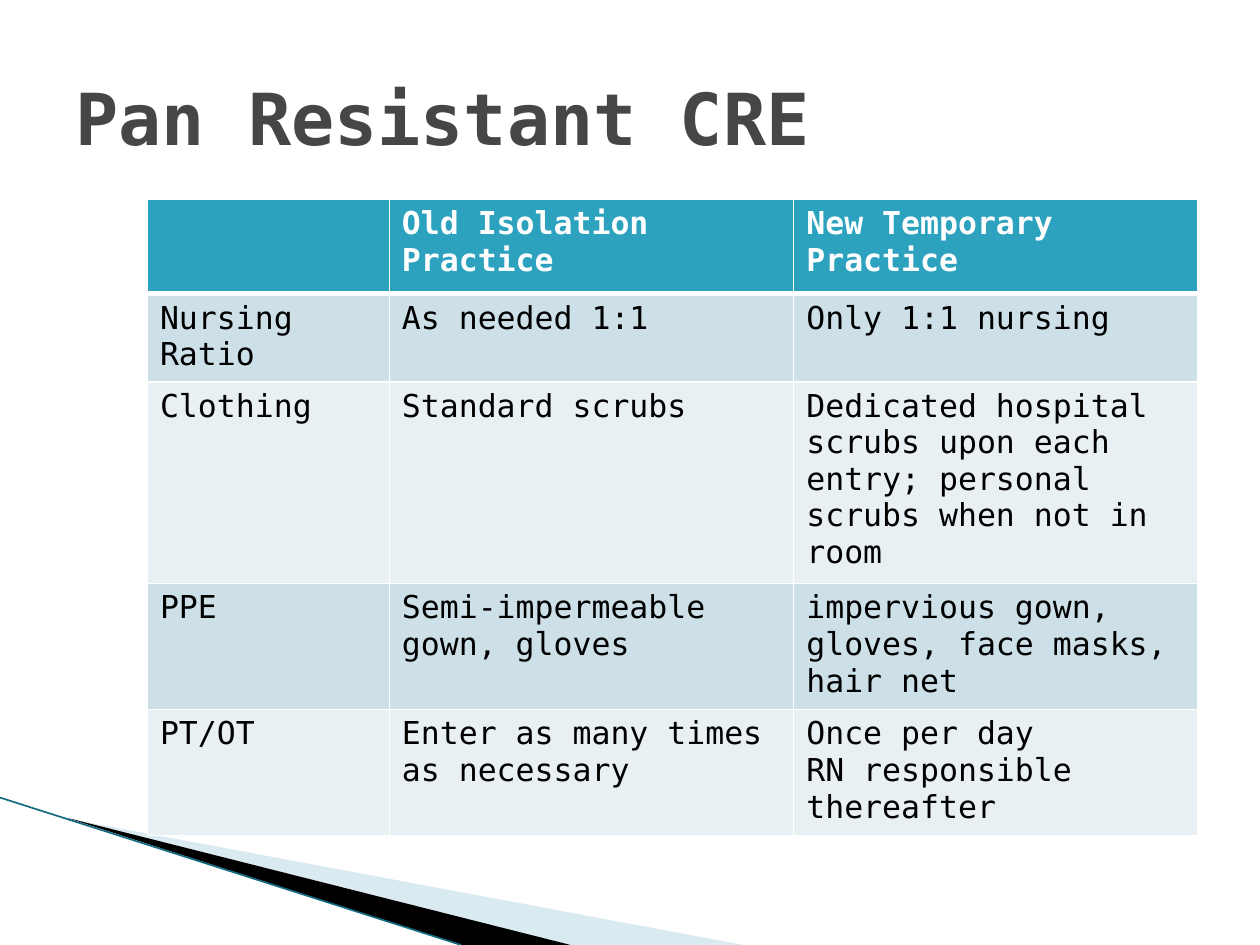
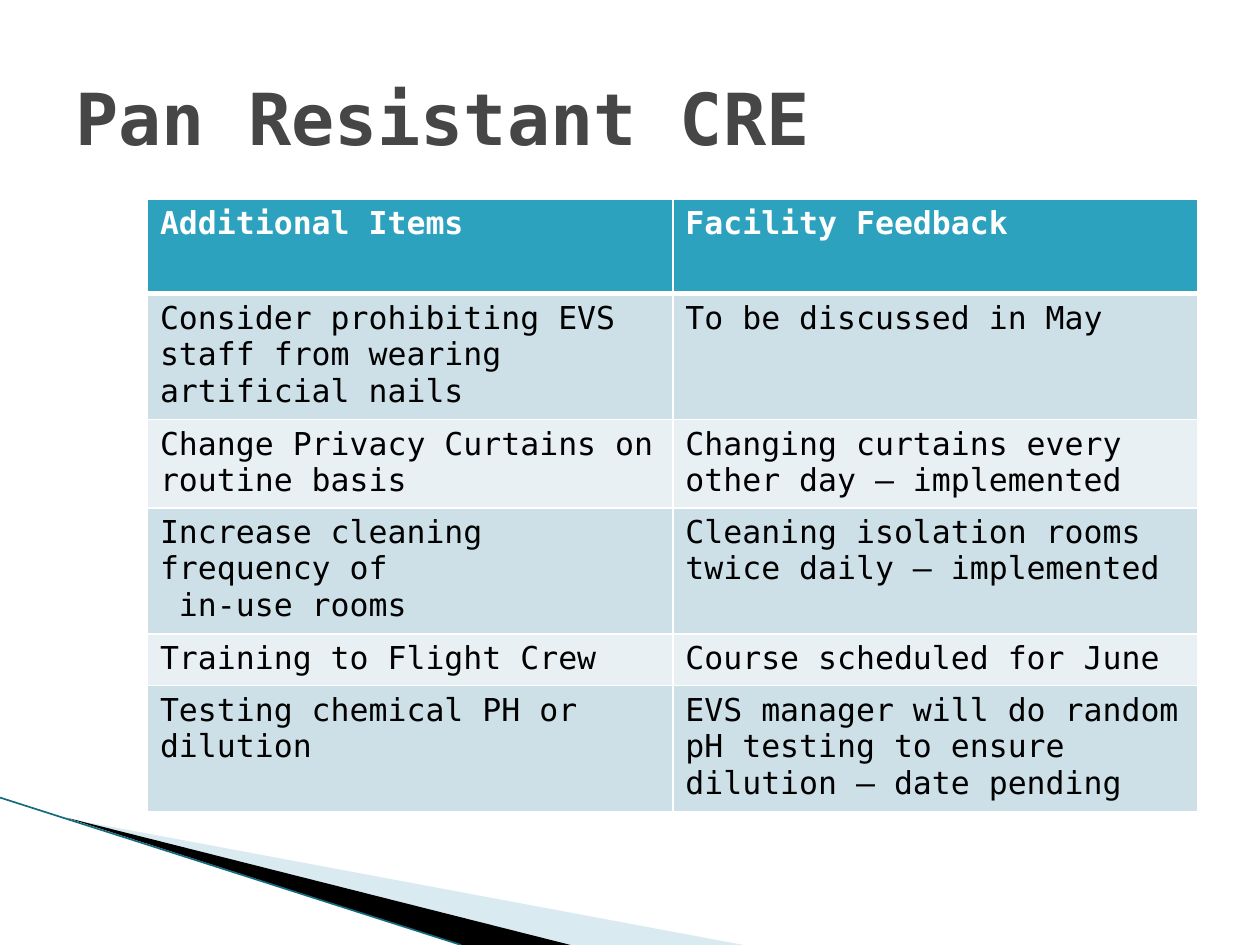
"""Build two slides that compare isolation practice for pan resistant CRE."""
from dataclasses import dataclass

from lxml.etree import SubElement
from pptx import Presentation
from pptx.dml.color import RGBColor
from pptx.enum.shapes import MSO_CONNECTOR
from pptx.enum.text import MSO_ANCHOR
from pptx.oxml.ns import qn
from pptx.util import Inches, Pt

FONT = "DejaVu Sans Mono"
TITLE = "Pan Resistant CRE"
GREY = RGBColor(0x46, 0x46, 0x46)
WHITE = RGBColor(0xFF, 0xFF, 0xFF)
BLACK = RGBColor(0x00, 0x00, 0x00)
TEAL = RGBColor(0x2D, 0xA2, 0xBF)
DEEP = RGBColor(0x14, 0x6B, 0x80)
SKY = RGBColor(0xA0, 0xCB, 0xDC)
BANDS = (RGBColor(0xE8, 0xF0, 0xF4), RGBColor(0xCD, 0xE0, 0xE8))
HEAD, ROW = 0.75, 0.41


@dataclass
class Wedge:
    points: list[tuple[float, float]]
    color: RGBColor
    alpha: int = 100


@dataclass
class Grid:
    widths: list[float]
    rows: list[list[str]]


WEDGES = [
    Wedge([(0.55, 6.5), (5.9, 7.5), (4.52, 7.5)], SKY, 40),
    Wedge([(0.53, 6.49), (4.53, 7.5), (3.66, 7.5)], BLACK),
]

GRIDS = [
    Grid([1.92, 3.21, 3.21], [
        ["", "Old Isolation Practice", "New Temporary Practice"],
        ["Nursing Ratio", "As needed 1:1", "Only 1:1 nursing"],
        ["Clothing", "Standard scrubs",
         "Dedicated hospital scrubs upon each entry; personal scrubs when not in room"],
        ["PPE", "Semi-impermeable gown, gloves",
         "impervious gown, gloves, face masks, hair net"],
        ["PT/OT", "Enter as many times as necessary",
         "Once per day\nRN responsible thereafter"],
    ]),
    Grid([4.17, 4.17], [
        ["Additional Items", "Facility Feedback"],
        ["Consider prohibiting EVS staff from wearing artificial nails",
         "To be discussed in May"],
        ["Change Privacy Curtains on routine basis",
         "Changing curtains every other day – implemented"],
        ["Increase cleaning frequency of\n in-use rooms",
         "Cleaning isolation rooms twice daily – implemented"],
        ["Training to Flight Crew", "Course scheduled for June"],
        ["Testing chemical PH or dilution",
         "EVS manager will do random pH testing to ensure dilution – date pending"],
    ]),
]


def write(frame, text: str, *, size: float = 18, color: RGBColor = BLACK,
          bold: bool = False) -> None:
    """Fill a text frame, one paragraph for each line."""
    frame.word_wrap = True
    frame.text = text
    for para in frame.paragraphs:
        font = para.font
        for run in para.runs:
            font = run.font
        font.name, font.size, font.bold = FONT, Pt(size), bold
        font.color.rgb = color


def draw_wedge(slide, wedge: Wedge) -> None:
    """Draw one filled wedge of the corner sweep."""
    start, *rest = [(Inches(x), Inches(y)) for x, y in wedge.points]
    pen = slide.shapes.build_freeform(*start)
    pen.add_line_segments(rest)
    shape = pen.convert_to_shape()
    shape.shadow.inherit = False
    shape.line.fill.background()
    shape.fill.solid()
    shape.fill.fore_color.rgb = wedge.color
    if wedge.alpha < 100:
        tint = shape.fill._xPr.find(qn("a:solidFill"))[0]
        SubElement(tint, qn("a:alpha"), val=str(wedge.alpha * 1000))


def draw_base(slide) -> None:
    """Draw the corner sweep and the title."""
    for wedge in WEDGES:
        draw_wedge(slide, wedge)
    edge = slide.shapes.add_connector(
        MSO_CONNECTOR.STRAIGHT, Inches(0), Inches(6.33), Inches(3.66), Inches(7.5))
    edge.line.color.rgb = DEEP
    edge.line.width = Pt(0.95)
    SubElement(edge._element.spPr, qn("a:effectLst"))
    box = slide.shapes.add_textbox(Inches(0.5), Inches(0.3), Inches(9), Inches(1.25))
    box.text_frame.vertical_anchor = MSO_ANCHOR.MIDDLE
    write(box.text_frame, TITLE, size=41, color=GREY, bold=True)


def set_edges(cell, row: int) -> None:
    """Rule a cell in white, with a thick line below the header."""
    props = cell._tc.get_or_add_tcPr()
    thick = {0: "B", 1: "T"}.get(row)
    for side in "LRTB":
        width = Pt(3 if side == thick else 1)
        line = SubElement(props, qn(f"a:ln{side}"), w=str(width))
        fill = SubElement(line, qn("a:solidFill"))
        SubElement(fill, qn("a:srgbClr"), val=str(WHITE))


def draw_grid(slide, grid: Grid) -> None:
    """Draw a table with a teal header and banded rows."""
    count = len(grid.rows)
    table = slide.shapes.add_table(
        count, len(grid.widths), Inches(1.17), Inches(1.58),
        Inches(sum(grid.widths)), Inches(HEAD + ROW * (count - 1))).table
    table.first_row = table.horz_banding = False
    for col, width in zip(table.columns, grid.widths):
        col.width = Inches(width)
    for r, texts in enumerate(grid.rows):
        head = r == 0
        table.rows[r].height = Inches(HEAD if head else ROW)
        for c, text in enumerate(texts):
            cell = table.cell(r, c)
            set_edges(cell, r)
            cell.fill.solid()
            cell.fill.fore_color.rgb = TEAL if head else BANDS[r % 2]
            write(cell.text_frame, text, color=WHITE if head else BLACK, bold=head)


def main() -> None:
    """Build and save the deck."""
    deck = Presentation()
    deck.slide_width, deck.slide_height = Inches(10), Inches(7.5)
    for grid in GRIDS:
        slide = deck.slides.add_slide(deck.slide_layouts[6])
        draw_base(slide)
        draw_grid(slide, grid)
    deck.save("out.pptx")


if __name__ == "__main__":
    main()
